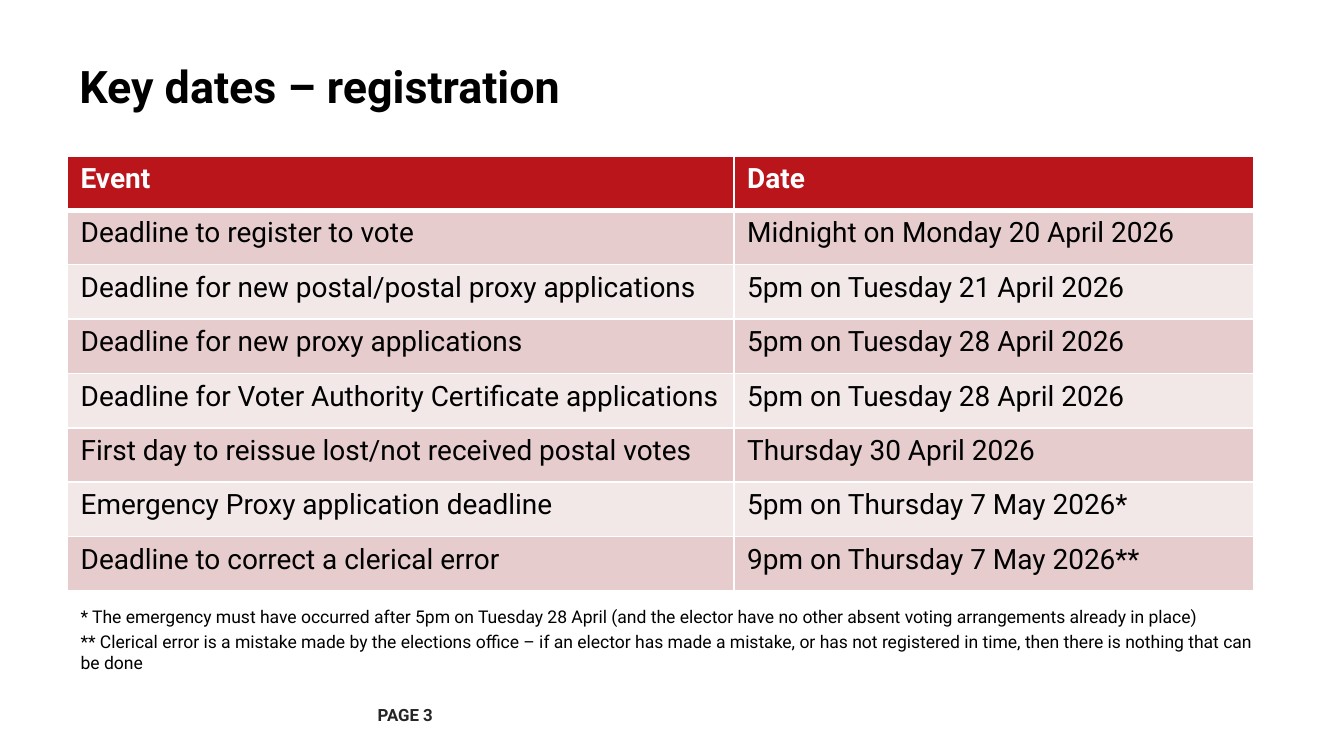
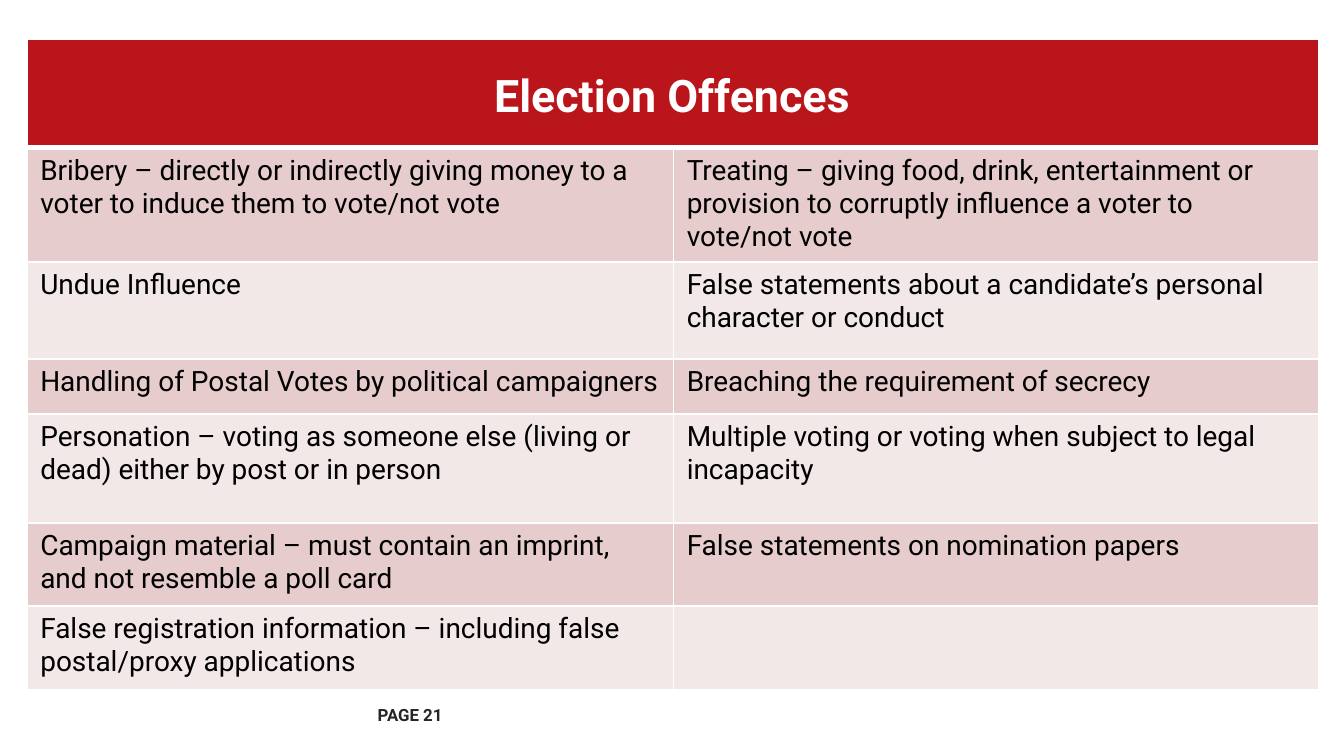
"""Build two election slides: key registration dates and election offences."""
from dataclasses import dataclass
from typing import Optional

from lxml.etree import SubElement
from pptx import Presentation
from pptx.dml.color import RGBColor as Rgb
from pptx.enum.text import MSO_ANCHOR as Anchor, PP_ALIGN as Align
from pptx.oxml.ns import qn
from pptx.slide import Slide
from pptx.table import _Cell as Cell
from pptx.util import Inches, Pt


@dataclass(frozen=True)
class Theme:
    font: str = "Roboto"
    black: str = "000000"
    white: str = "FFFFFF"
    grey: str = "262626"
    red: str = "BB151C"
    bands: tuple[str, str] = ("E7CCCD", "F3E8E8")
    title: float = 24
    table: float = 15
    note: float = 9.4
    page: float = 9
    thin: float = 1
    thick: float = 3


@dataclass(frozen=True)
class Box:
    left: float
    top: float
    width: float
    height: float


@dataclass(frozen=True)
class Style:
    size: float
    color: str
    bold: bool = False
    align: Align = Align.LEFT
    anchor: Anchor = Anchor.TOP
    gap: float = 0


@dataclass(frozen=True)
class Grid:
    left: float
    top: float
    cols: tuple[float, ...]
    heights: tuple[float, ...]
    rows: tuple[tuple[str, str], ...]
    merge: bool = False


@dataclass(frozen=True)
class Page:
    number: int
    title: str
    top: float
    style: Style
    grid: Grid
    notes: Optional[tuple[str, ...]] = None


THEME = Theme()
HEAD = Style(THEME.table, THEME.white, True)
BODY = Style(THEME.table, THEME.black)
NOTE = Style(THEME.note, THEME.black, gap=2)
FOOT = Style(THEME.page, THEME.grey, True, anchor=Anchor.MIDDLE)
DARK = Style(THEME.title, THEME.black, True, anchor=Anchor.MIDDLE)
LIGHT = Style(THEME.title, THEME.white, True, Align.CENTER, Anchor.MIDDLE)

DATES = Grid(0.5, 1.16, (4.96, 3.87), (3.24 / 8,) * 8, (
    ("Event", "Date"),
    ("Deadline to register to vote", "Midnight on Monday 20 April 2026"),
    ("Deadline for new postal/postal proxy applications", "5pm on Tuesday 21 April 2026"),
    ("Deadline for new proxy applications", "5pm on Tuesday 28 April 2026"),
    ("Deadline for Voter Authority Certificate applications", "5pm on Tuesday 28 April 2026"),
    ("First day to reissue lost/not received postal votes", "Thursday 30 April 2026"),
    ("Emergency Proxy application deadline", "5pm on Thursday 7 May 2026*"),
    ("Deadline to correct a clerical error", "9pm on Thursday 7 May 2026**"),
))
CRIMES = Grid(0.2, 0.29, (4.81, 4.8), (0.81, 0.81, 0.72, 0.41, 0.81, 0.62, 0.62), (
    ("", ""),
    ("Bribery – directly or indirectly giving money to a voter to induce them to vote/not vote",
     "Treating – giving food, drink, entertainment or provision to corruptly influence "
     "a voter to vote/not vote"),
    ("Undue Influence", "False statements about a candidate’s personal character or conduct"),
    ("Handling of Postal Votes by political campaigners", "Breaching the requirement of secrecy"),
    ("Personation – voting as someone else (living or dead) either by post or in person",
     "Multiple voting or voting when subject to legal incapacity"),
    ("Campaign material – must contain an imprint, and not resemble a poll card",
     "False statements on nomination papers"),
    ("False registration information – including false postal/proxy applications", ""),
), merge=True)
NOTES = (
    "* The emergency must have occurred after 5pm on Tuesday 28 April "
    "(and the elector have no other absent voting arrangements already in place)",
    "** Clerical error is a mistake made by the elections office – if an elector has made "
    "a mistake, or has not registered in time, then there is nothing that can be done",
)
PAGES = (
    Page(3, "Key dates – registration", 0.23, DARK, DATES, NOTES),
    Page(21, "Election Offences", 0.29, LIGHT, CRIMES),
)


def format_text(frame, style: Style) -> None:
    for index, para in enumerate(frame.paragraphs):
        para.alignment = style.align
        if index and style.gap:
            para.space_before = Pt(style.gap)
        for run in para.runs:
            font = run.font
            font.name, font.size, font.bold = THEME.font, Pt(style.size), style.bold
            font.color.rgb = Rgb.from_string(style.color)


def add_text(slide: Slide, box: Box, text: str, style: Style) -> None:
    shape = slide.shapes.add_textbox(
        Inches(box.left), Inches(box.top), Inches(box.width), Inches(box.height))
    frame = shape.text_frame
    frame.word_wrap = True
    frame.vertical_anchor = style.anchor
    frame.margin_left = frame.margin_right = Inches(0.09)
    frame.margin_top = frame.margin_bottom = Inches(0.04)
    frame.text = text
    format_text(frame, style)


def add_edges(cell: Cell, row: int) -> None:
    props = cell._tc.get_or_add_tcPr()
    wide = {"a:lnT": row == 1, "a:lnB": row == 0}
    for place, tag in enumerate(("a:lnL", "a:lnR", "a:lnT", "a:lnB")):
        width = THEME.thick if wide.get(tag) else THEME.thin
        line = SubElement(props, qn(tag), w=str(Pt(width)))
        fill = SubElement(line, qn("a:solidFill"))
        SubElement(fill, qn("a:srgbClr"), val=THEME.white)
        props.insert(place, line)


def add_grid(slide: Slide, grid: Grid) -> None:
    table = slide.shapes.add_table(
        len(grid.rows), len(grid.cols), Inches(grid.left), Inches(grid.top),
        Inches(sum(grid.cols)), Inches(sum(grid.heights))).table
    table.horz_banding = False
    for col, width in zip(table.columns, grid.cols):
        col.width = Inches(width)
    for row, height in zip(table.rows, grid.heights):
        row.height = Inches(height)
    for row, texts in enumerate(grid.rows):
        color = THEME.bands[(row - 1) % 2] if row else THEME.red
        for col, text in enumerate(texts):
            cell = table.cell(row, col)
            cell.fill.solid()
            cell.fill.fore_color.rgb = Rgb.from_string(color)
            add_edges(cell, row)
            if text:
                cell.text_frame.text = text
                format_text(cell.text_frame, BODY if row else HEAD)
    if grid.merge:
        table.cell(0, 0).merge(table.cell(0, len(grid.cols) - 1))


def add_page(deck, page: Page) -> None:
    slide = deck.slides.add_slide(deck.slide_layouts[6])
    add_text(slide, Box(2.72, 5.17, 0.87, 0.3), f"PAGE {page.number}", FOOT)
    add_grid(slide, page.grid)
    add_text(slide, Box(0.5, page.top, 9, 0.82), page.title, page.style)
    if page.notes:
        add_text(slide, Box(0.51, 4.47, 9, 0.55), "\n".join(page.notes), NOTE)


def main() -> None:
    deck = Presentation()
    deck.slide_width = Inches(10)
    deck.slide_height = Inches(10 * 9 / 16)
    for page in PAGES:
        add_page(deck, page)
    deck.save("out.pptx")


if __name__ == "__main__":
    main()
